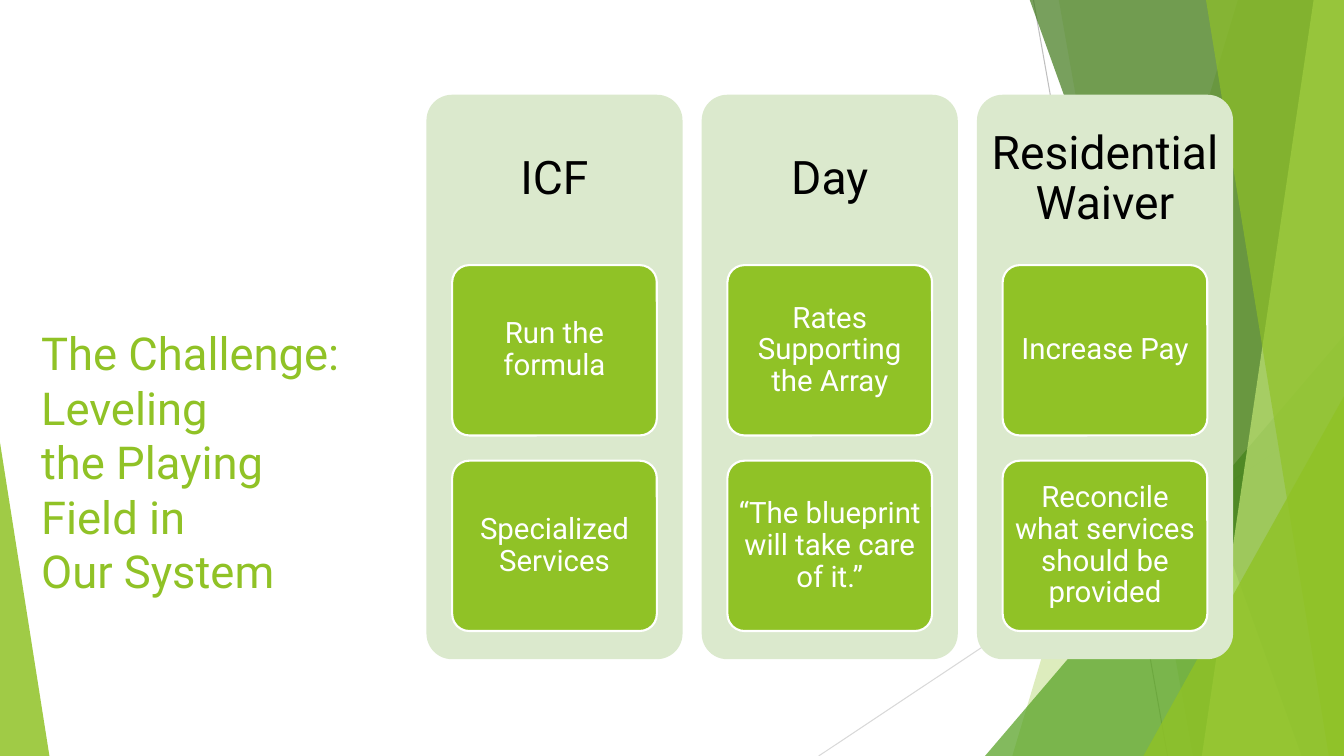
from lxml.etree import SubElement
from pptx import Presentation
from pptx.dml.color import RGBColor
from pptx.enum.shapes import MSO_CONNECTOR, MSO_SHAPE
from pptx.enum.text import MSO_ANCHOR, PP_ALIGN
from pptx.oxml.ns import qn
from pptx.util import Inches, Pt

THEME = {
    "font": "Roboto",
    "title_size": 32.4, "heading_size": 33, "card_size": 21,
    "green": "90C226", "panel": "DBE9CD", "white": "FFFFFF", "black": "000000",
    "leaf": "54A021", "forest": "3F7819", "lime": "C0E474",
    "gray": "BFBFBF", "light_gray": "D9D9D9",
}
SLIDE_W, SLIDE_H = 13.33, 7.5

TITLE = ["The Challenge:", "Leveling", "the Playing", "Field in", "Our System"]
COLUMNS = [
    ("ICF", ["Run the formula", "Specialized Services"]),
    ("Day", ["Rates Supporting the Array", "“The blueprint will take care of it.”"]),
    ("Residential Waiver", ["Increase Pay", "Reconcile what services should be provided"]),
]

RAYS = [((10.25, 0), (11.58, 7.5), "gray"), ((13.33, 4.03), (8.12, 7.5), "light_gray")]
FACETS = [
    ("band", 12.28, 10.04, "green", 30),
    ("band", 10.5, 11.83, "green", 20),
    ("triangle", (9.77, 3.33, 3.56, 4.17), 1, "leaf", 72),
    ("band", 10.21, 12.91, "forest", 70),
    ("band", 13.03, 11.92, "lime", 70),
    ("band", 11.96, 13.18, "green", 65),
    ("triangle", (11.34, 3.93, 1.99, 3.57), 1, "green", 80),
    ("triangle", (0, 4.39, 0.49, 3.11), 0, "green", 85),
]

PANEL_X, PANEL_Y, PANEL_W, PANEL_H, PANEL_STEP = 4.23, 0.94, 2.54, 5.6, 2.73
CARD_Y, CARD_W, CARD_H, CARD_STEP = 2.63, 2.03, 1.69, 1.94
PANEL_INSETS = (0.06, 0.07, 0.06, 3.99)
CARD_INSETS = (0.06, 0.04, 0.06, 0.04)


def color(name):
    return RGBColor.from_string(THEME[name])


def paint(sp, fill, alpha=100):
    sp.shadow.inherit = False
    sp.line.fill.background()
    sp.fill.solid()
    sp.fill.fore_color.rgb = color(fill)
    if alpha < 100:
        clr = sp.fill._xPr.find(qn("a:solidFill"))[0]
        SubElement(clr, qn("a:alpha")).set("val", str(alpha * 1000))


def add_ray(shapes, start, end, line):
    cx = shapes.add_connector(MSO_CONNECTOR.STRAIGHT, *map(Inches, start + end))
    cx.line.color.rgb = color(line)
    cx.line.width = Pt(0.75)
    SubElement(cx._element.spPr, qn("a:effectLst"))


def add_band(shapes, top_x, bottom_x):
    points = [(top_x, -0.01), (SLIDE_W, -0.01), (SLIDE_W, SLIDE_H), (bottom_x, SLIDE_H)]
    points = [(Inches(x), Inches(y)) for x, y in points]
    builder = shapes.build_freeform(*points[0])
    builder.add_line_segments(points[1:], close=True)
    return builder.convert_to_shape()


def add_preset(shapes, kind, box, adj):
    sp = shapes.add_shape(kind, *map(Inches, box))
    sp.adjustments[0] = adj
    return sp


def write(sp, text, size, font_color, insets, align, anchor, spacing=None):
    tf = sp.text_frame
    tf.word_wrap = True
    tf.vertical_anchor = anchor
    tf.margin_left, tf.margin_top, tf.margin_right, tf.margin_bottom = map(Inches, insets)
    p = tf.paragraphs[0]
    p.text = text
    p.alignment = align
    p.line_spacing = spacing
    for r in p.runs:
        r.font.name = THEME["font"]
        r.font.size = Pt(THEME[size])
        r.font.color.rgb = color(font_color)


def add_box(shapes, box, fill, text, size, font_color, insets):
    sp = add_preset(shapes, MSO_SHAPE.ROUNDED_RECTANGLE, box, 0.1)
    paint(sp, fill)
    write(sp, text, size, font_color, insets, PP_ALIGN.CENTER, MSO_ANCHOR.MIDDLE, 0.9)
    return sp


def main():
    prs = Presentation()
    prs.slide_width, prs.slide_height = Inches(SLIDE_W), Inches(SLIDE_H)
    shapes = prs.slides.add_slide(prs.slide_layouts[6]).shapes

    for ray in RAYS:
        add_ray(shapes, *ray)
    for kind, a, b, fill, alpha in FACETS:
        if kind == "band":
            sp = add_band(shapes, a, b)
        else:
            sp = add_preset(shapes, MSO_SHAPE.ISOSCELES_TRIANGLE, a, b)
        paint(sp, fill, alpha)

    title = shapes.add_textbox(*map(Inches, (0.31, 3.18, 11, 1.59)))
    write(title, "\v".join(TITLE), "title_size", "green", (0.1, 0.05, 0.1, 0.05),
          PP_ALIGN.LEFT, MSO_ANCHOR.TOP)

    for i, (heading, cards) in enumerate(COLUMNS):
        x = PANEL_X + i * PANEL_STEP
        add_box(shapes, (x, PANEL_Y, PANEL_W, PANEL_H), "panel",
                heading, "heading_size", "black", PANEL_INSETS)
        card_x = x + (PANEL_W - CARD_W) / 2
        for j, text in enumerate(cards):
            card = add_box(shapes, (card_x, CARD_Y + j * CARD_STEP, CARD_W, CARD_H), "green",
                           text, "card_size", "white", CARD_INSETS)
            card.line.color.rgb = color("white")
            card.line.width = Pt(1.5)

    prs.save("out.pptx")


if __name__ == "__main__":
    main()
